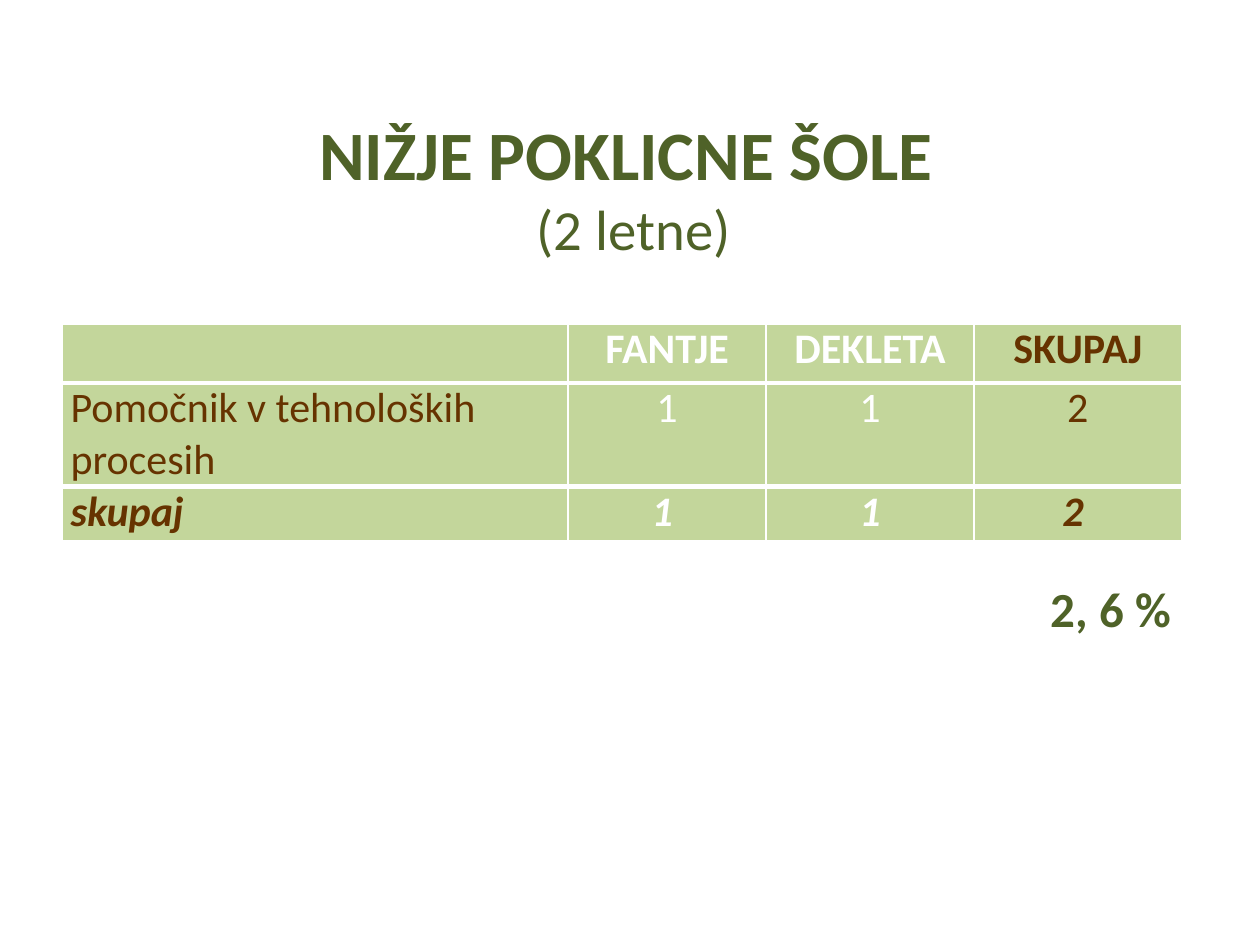
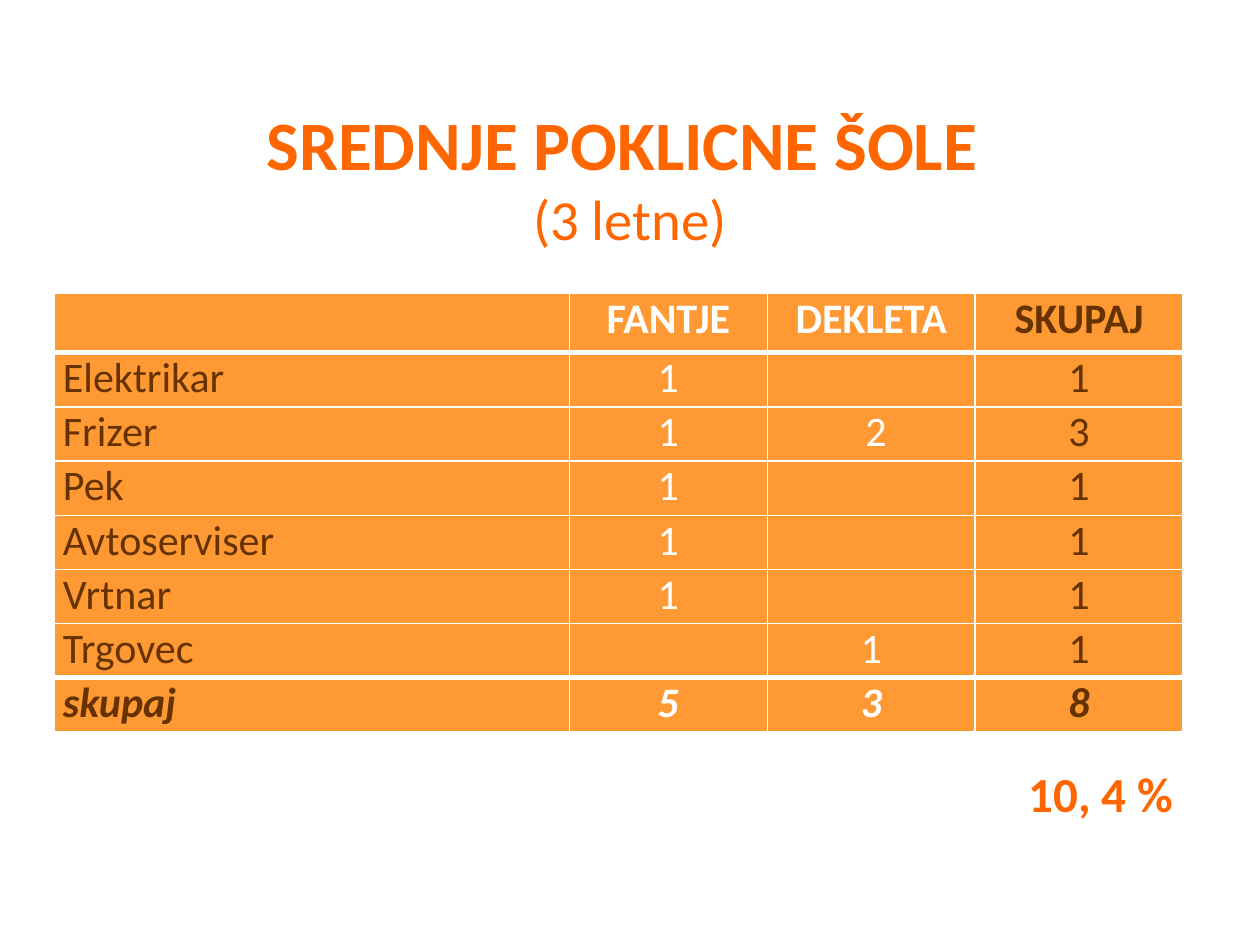
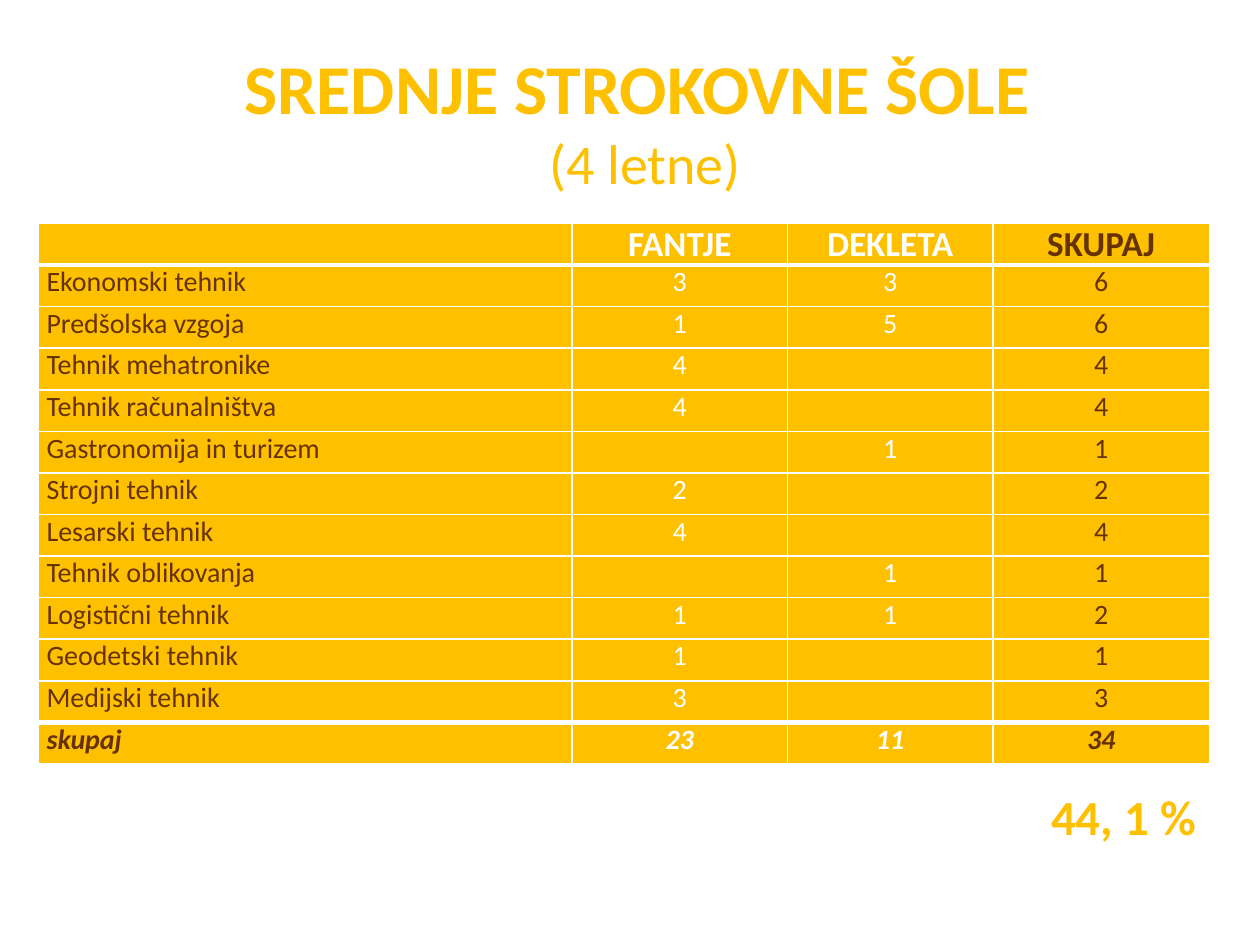
import pptx
import pptx.util
import pptx.dml.color
import pptx.enum.text
import pptx.oxml.ns
from lxml import etree

Inches = pptx.util.Inches
Pt = pptx.util.Pt
RGBColor = pptx.dml.color.RGBColor
Align = pptx.enum.text.PP_ALIGN

FONT = "Calibri"
WHITE = RGBColor(0xFF, 0xFF, 0xFF)
BROWN = RGBColor(0x66, 0x33, 0x00)
DARK_GREEN = RGBColor(0x4F, 0x62, 0x28)
LIGHT_GREEN = RGBColor(0xC3, 0xD6, 0x9B)
DARK_ORANGE = RGBColor(0xFF, 0x66, 0x00)
LIGHT_ORANGE = RGBColor(0xFF, 0x99, 0x33)
YELLOW = RGBColor(0xFF, 0xC0, 0x00)

HEADER = ("", "FANTJE", "DEKLETA", "SKUPAJ")
THIN, THICK = 1, 3

LOWER_VOCATIONAL = [
    ("Pomočnik v tehnoloških procesih", "1", "1", "2"),
    ("skupaj", "1 ", "1", "2 "),
]
MIDDLE_VOCATIONAL = [
    ("Elektrikar", "1", "", "1"),
    ("Frizer", "1", " 2", "3"),
    ("Pek", "1", "", "1"),
    ("Avtoserviser", "1", "", "1"),
    ("Vrtnar", "1", "", "1"),
    ("Trgovec", "", "1", "1"),
    ("skupaj", "5", "3", "8"),
]
TECHNICAL = [
    ("Ekonomski tehnik", "3", "3", "6"),
    ("Predšolska vzgoja", "1", "5", "6"),
    ("Tehnik mehatronike", "4", "", "4"),
    ("Tehnik računalništva", "4", "", "4"),
    ("Gastronomija in turizem", "", "1", "1"),
    ("Strojni tehnik", "2", "", "2"),
    ("Lesarski tehnik", "4", "", "4"),
    ("Tehnik oblikovanja", "", "1", "1"),
    ("Logistični tehnik", "1", "1", "2"),
    ("Geodetski tehnik", "1", "", "1"),
    ("Medijski tehnik", "3", "", "3"),
    ("skupaj", "23", "11", "34"),
]


def style_paragraph(para, size, color, bold=False, italic=False, align=Align.LEFT):
    para.alignment = align
    font = para.font
    font.name = FONT
    font.size = Pt(size)
    font.bold = bold
    font.italic = italic
    font.color.rgb = color


def add_title(page, left, top, name, years, color, sizes):
    box = page.shapes.add_textbox(Inches(left), Inches(top), Inches(9), Inches(1.22))
    frame = box.text_frame
    frame.word_wrap = True
    frame.margin_top = frame.margin_bottom = 0
    frame.text = f"{name} \n{years}"
    for para, size, bold in zip(frame.paragraphs, sizes, (True, False)):
        style_paragraph(para, size, color, bold, align=Align.CENTER)


def add_share(page, right, top, text, color):
    width = 1.65
    box = page.shapes.add_textbox(
        Inches(right - width), Inches(top), Inches(width), Inches(0.57))
    frame = box.text_frame
    frame.word_wrap = True
    frame.text = text
    style_paragraph(frame.paragraphs[0], 28, color, True, align=Align.RIGHT)


def set_borders(cell, top, bottom):
    properties = cell._tc.get_or_add_tcPr()
    for side, width in (("L", THIN), ("R", THIN), ("T", top), ("B", bottom)):
        line = etree.SubElement(
            properties, pptx.oxml.ns.qn(f"a:ln{side}"), w=str(Pt(width)))
        fill = etree.SubElement(line, pptx.oxml.ns.qn("a:solidFill"))
        etree.SubElement(fill, pptx.oxml.ns.qn("a:srgbClr"), val=str(WHITE))


def fill_cell(cell, text, column, size, bold, italic, fill):
    cell.margin_left = cell.margin_right = Inches(0.07)
    cell.margin_top = cell.margin_bottom = 0
    cell.fill.solid()
    cell.fill.fore_color.rgb = fill
    cell.text = text
    style_paragraph(
        cell.text_frame.paragraphs[0], size,
        BROWN if column in (0, len(HEADER) - 1) else WHITE,
        bold, italic, Align.LEFT if column == 0 else Align.CENTER)


def add_school_table(page, left, top, widths, heights, rows, fill, header_size, body_size):
    rows = [HEADER] + rows
    last = len(rows) - 1
    table = page.shapes.add_table(
        len(rows), len(HEADER), Inches(left), Inches(top),
        Inches(sum(widths)), Inches(sum(heights))).table
    table.horz_banding = False
    for column, width in zip(table.columns, widths):
        column.width = Inches(width)
    for row, height in zip(table.rows, heights):
        row.height = Inches(height)
    for index, values in enumerate(rows):
        is_header, is_total = index == 0, index == last
        for column, text in enumerate(values):
            cell = table.cell(index, column)
            set_borders(cell,
                        THICK if index in (1, last) else THIN,
                        THICK if index in (0, last - 1) else THIN)
            fill_cell(cell, text, column, header_size if is_header else body_size,
                      is_header or is_total, is_total, fill)


def main():
    deck = pptx.Presentation()
    deck.slide_width = Inches(10)
    deck.slide_height = Inches(7.5)
    blank = deck.slide_layouts[6]

    page = deck.slides.add_slide(blank)
    add_title(page, 0.53, 0.88, "NIŽJE POKLICNE ŠOLE", "(2 letne)", DARK_GREEN, (39.6, 32.4))
    add_school_table(page, 0.49, 2.57, (4.02, 1.57, 1.65, 1.65), (0.47, 0.82, 0.43),
                     LOWER_VOCATIONAL, LIGHT_GREEN, 24, 24)
    add_share(page, 9.39, 4.54, "2, 6 %", DARK_GREEN)

    page = deck.slides.add_slide(blank)
    add_title(page, 0.5, 0.8, "SREDNJE POKLICNE ŠOLE", "(3 letne)", DARK_ORANGE, (39.6, 32.4))
    add_school_table(page, 0.43, 2.33, (4.09, 1.57, 1.65, 1.65), [0.47] + [0.43] * 7,
                     MIDDLE_VOCATIONAL, LIGHT_ORANGE, 24, 24)
    add_share(page, 9.41, 6.01, "10, 4 %", DARK_ORANGE)

    page = deck.slides.add_slide(blank)
    add_title(page, 0.62, 0.35, "SREDNJE STROKOVNE ŠOLE", "(4 letne)", YELLOW, (40, 32))
    add_school_table(page, 0.3, 1.77, (4.24, 1.71, 1.63, 1.72), [0.33] * 13,
                     TECHNICAL, YELLOW, 20, 16)
    add_share(page, 9.59, 6.19, "44, 1 %", YELLOW)

    deck.save("out.pptx")


if __name__ == "__main__":
    main()
